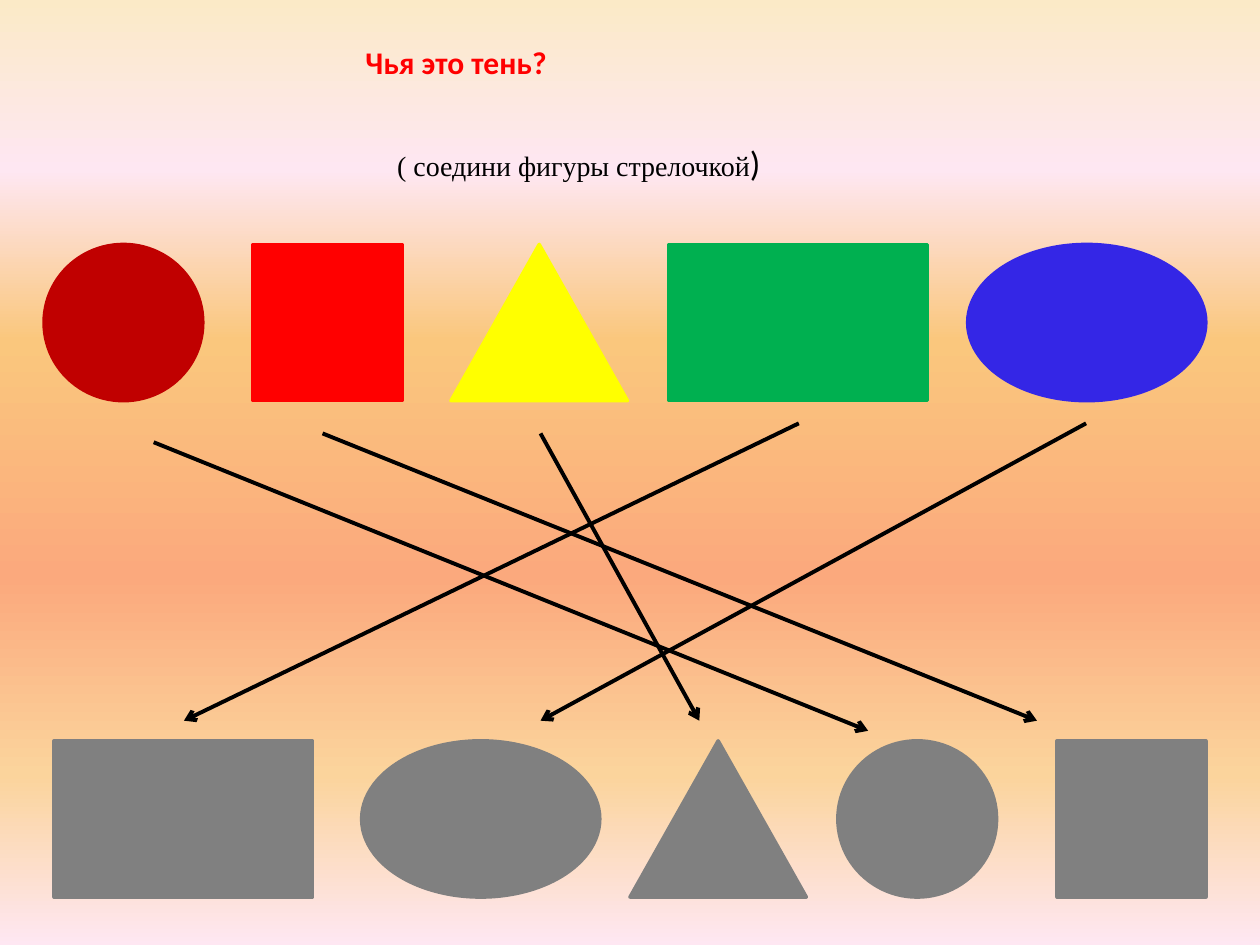
from lxml import etree
from pptx import Presentation
from pptx.dml.color import RGBColor
from pptx.enum.shapes import MSO_CONNECTOR, MSO_SHAPE
from pptx.enum.text import MSO_ANCHOR, MSO_AUTO_SIZE, PP_ALIGN
from pptx.oxml.ns import qn
from pptx.util import Inches, Pt

CIRCLE = OVAL = MSO_SHAPE.OVAL
SQUARE = RECTANGLE = MSO_SHAPE.RECTANGLE
TRIANGLE = MSO_SHAPE.ISOSCELES_TRIANGLE
STRAIGHT = MSO_CONNECTOR.STRAIGHT
TOP = MSO_ANCHOR.TOP
LEFT, CENTER = PP_ALIGN.LEFT, PP_ALIGN.CENTER
FIT_SHAPE = MSO_AUTO_SIZE.SHAPE_TO_FIT_TEXT

COLORS = {
    "circle": "C00000", "square": "FF0000", "triangle": "FFFF00",
    "rectangle": "00B050", "oval": "3426E6", "shadow": "808080",
    "title": "FF0000", "ink": "000000",
}
BACKGROUND = [(0, "FBEAC7"), (18, "FEE7F2"), (36, "FAC77D"),
              (61, "FBA97D"), (82, "FBD49C"), (100, "FEE7F2")]


def write_text(box, left, top, width, height, align, runs):
    box.left, box.top = Inches(left), Inches(top)
    box.width, box.height = Inches(width), Inches(height)
    frame = box.text_frame
    frame.word_wrap = False
    frame.auto_size = FIT_SHAPE
    frame.vertical_anchor = TOP
    para = frame.paragraphs[0]
    para.alignment = align
    for text, font, size, color, bold in runs:
        span = para.add_run()
        span.text = text
        span.font.name = font
        span.font.size = Pt(size)
        span.font.bold = bold
        span.font.color.rgb = RGBColor.from_string(COLORS[color])


deck = Presentation()
deck.slide_width, deck.slide_height = Inches(10), Inches(7.5)
page = deck.slides.add_slide(deck.slide_layouts[5])

fill = page.background.fill
fill.gradient()
fill.gradient_angle = 270
stops = page.element.find(".//" + qn("a:gsLst"))
for stop in list(stops):
    stops.remove(stop)
for percent, color in BACKGROUND:
    stop = etree.SubElement(stops, qn("a:gs"), pos=str(percent * 1000))
    etree.SubElement(stop, qn("a:srgbClr"), val=color)

write_text(page.shapes.title, 2.8, 0.29, 4.25, 0.79, LEFT,
           [("Чья это тень?", "Calibri", 18, "title", True)])
subtitle = page.shapes.add_textbox(0, 0, 0, 0)
write_text(subtitle, 3.03, 1.07, 3.13, 0.44, CENTER,
           [("( соедини фигуры стрелочкой", "Times New Roman", 16, "ink", False),
            (")", "Calibri", 20, "ink", False)])

figures = [
    ("circle", CIRCLE, 1.26, 0.35, 6.65),
    ("square", SQUARE, 1.18, 2.01, 8.39),
    ("triangle", TRIANGLE, 1.4, 3.58, 5),
    ("rectangle", RECTANGLE, 2.05, 5.31, 0.43),
    ("oval", OVAL, 1.89, 7.68, 2.87),
]
for name, kind, width, figure_left, shadow_left in figures:
    for left, top, color in [(figure_left, 1.94, name), (shadow_left, 5.88, "shadow")]:
        shape = page.shapes.add_shape(kind, Inches(left), Inches(top), Inches(width), Inches(1.24))
        shape.shadow.inherit = False
        shape.fill.solid()
        shape.fill.fore_color.rgb = RGBColor.from_string(COLORS[color])
        shape.line.color.rgb = RGBColor.from_string(COLORS[color])
        shape.line.width = Pt(2)

arrows = [
    (1.22, 3.51, 6.89, 5.8),
    (2.56, 3.44, 8.23, 5.72),
    (4.29, 3.44, 5.55, 5.72),
    (6.34, 3.36, 1.46, 5.72),
    (8.62, 3.36, 4.29, 5.72),
]
for ends in arrows:
    arrow = page.shapes.add_connector(STRAIGHT, *[Inches(value) for value in ends])
    arrow.line.color.rgb = RGBColor.from_string(COLORS["ink"])
    arrow.line.width = Pt(2.25)
    etree.SubElement(arrow.line._get_or_add_ln(), qn("a:tailEnd"), type="arrow")
    etree.SubElement(arrow.element.spPr, qn("a:effectLst"))

deck.save("out.pptx")
